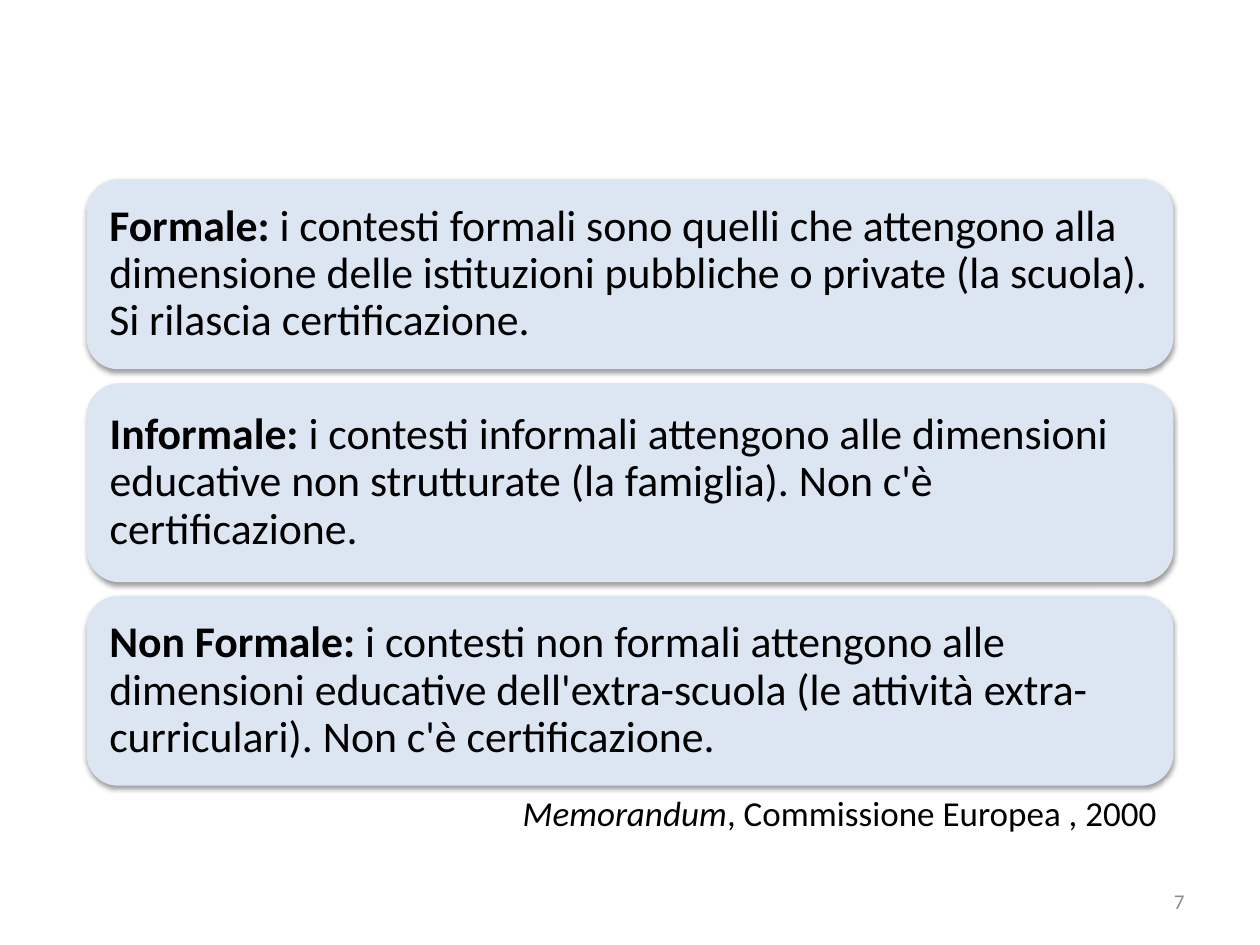
from pptx import Presentation
from pptx.dml.color import RGBColor
from pptx.enum import shapes, text
from pptx.oxml import parse_xml
from pptx.oxml.ns import nsdecls
from pptx.util import Pt

SHADOW = (
    f'<a:effectLst {nsdecls("a")}>'
    f'<a:outerShdw blurRad="{Pt(3.1)}" dist="{Pt(1.6)}" dir="5400000" rotWithShape="0">'
    '<a:srgbClr val="000000"><a:alpha val="38000"/></a:srgbClr>'
    '</a:outerShdw></a:effectLst>'
)


def color(code):
    return RGBColor.from_string(code)


def write(shape, *runs, size, ink="000000", align="LEFT", anchor="MIDDLE",
          wrap=True, lines=1.0):
    """Fill a shape with one paragraph; each run is (words, bold, italic)."""
    frame = shape.text_frame
    frame.word_wrap = wrap
    frame.vertical_anchor = text.MSO_ANCHOR[anchor]
    par = frame.paragraphs[0]
    par.alignment = text.PP_ALIGN[align]
    par.line_spacing = lines
    for words, bold, italic in runs:
        run = par.add_run()
        run.text = words
        font = run.font
        font.name, font.size = "Calibri", Pt(size)
        font.bold, font.italic = bold, italic
        font.color.rgb = color(ink)


deck = Presentation()
deck.slide_width, deck.slide_height = Pt(720), Pt(540)
slide = deck.slides.add_slide(deck.slide_layouts[6])

# Learning contexts: term, definition, card height
cards = [
    ("Formale: ",
     "i contesti formali sono quelli che attengono alla dimensione delle "
     "istituzioni pubbliche o private (la scuola). Si rilascia certificazione.",
     108.4),
    ("Informale: ",
     "i contesti informali attengono alle dimensioni educative non strutturate "
     "(la famiglia). Non c'è certificazione.",
     113.8),
    ("Non Formale: ",
     "i contesti non formali attengono alle dimensioni educative "
     "dell'extra-scuola (le attività extra-curriculari). Non c'è certificazione.",
     108.4),
]
top, gap = 102.6, 7.9
for term, words, height in cards:
    card = slide.shapes.add_shape(shapes.MSO_SHAPE.ROUNDED_RECTANGLE,
                                  Pt(49.5), Pt(top), Pt(621), Pt(height))
    card.fill.solid()
    card.fill.fore_color.rgb = color("DCE6F2")
    card.line.fill.background()
    card._element.spPr.append(parse_xml(SHADOW))
    write(card, (term, True, False), (words, False, False), size=25, lines=0.9)
    # The rounded corners already push the text in by about 5 pt
    card.text_frame.margin_left = Pt(7.7)
    card.text_frame.margin_right = Pt(7)
    top += height + gap

source = slide.shapes.add_textbox(Pt(291.6), Pt(448.6), Pt(379.4), Pt(31.5))
write(source, ("Memorandum", False, True),
      (", Commissione Europea , 2000", False, False),
      size=20, anchor="TOP", wrap=False)

number = slide.shapes.add_textbox(Pt(516), Pt(500.5), Pt(168), Pt(28.75))
write(number, ("7", False, False), size=12, ink="8C8C8C", align="RIGHT")

deck.save("out.pptx")
